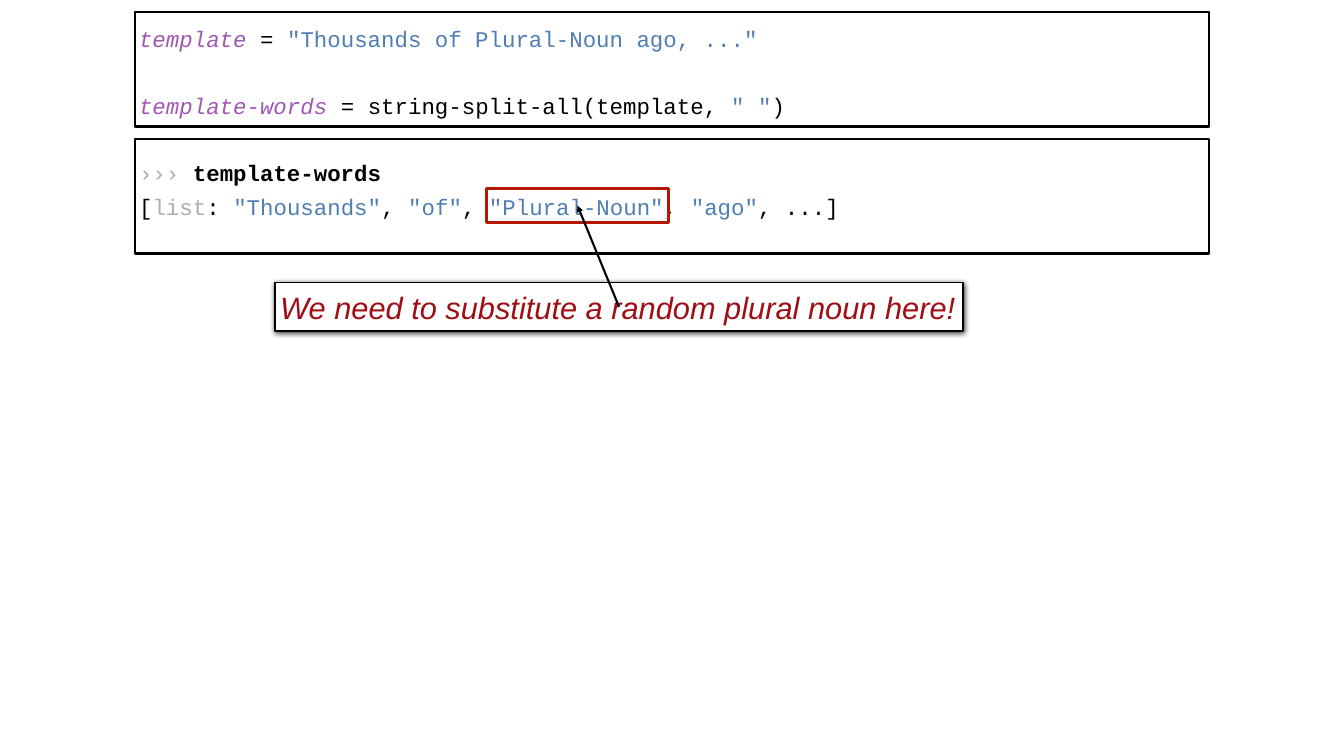
from lxml.etree import SubElement
from pptx import Presentation
from pptx.dml.color import RGBColor
from pptx.enum.shapes import MSO_CONNECTOR as Connector, MSO_SHAPE as Shape
from pptx.enum.text import MSO_ANCHOR as Anchor, MSO_AUTO_SIZE as AutoSize, PP_ALIGN as Align
from pptx.oxml.ns import qn
from pptx.util import Inches, Pt

BLACK = RGBColor(0x00, 0x00, 0x00)
WHITE = RGBColor(0xFF, 0xFF, 0xFF)
PURPLE = RGBColor(0x9F, 0x59, 0xB3)
BLUE = RGBColor(0x50, 0x7E, 0xB3)
GRAY = RGBColor(0xAB, 0xAF, 0xB3)
RED = RGBColor(0xB5, 0x17, 0x00)
DARK_RED = RGBColor(0xA0, 0x0E, 0x15)

CODE_LEFT = 2.68
CODE_LINE = Pt(48)
VARIABLE = {"color": PURPLE, "italic": True}
STRING = {"color": BLUE}
MUTED = {"color": GRAY}
PLAIN = {}

CODE = [
    (False, [("template", VARIABLE), (" = ", PLAIN),
             ('"Thousands of Plural-Noun ago, ..."', STRING)]),
    (True, [("template-words", VARIABLE), (" = string-split-all(template, ", PLAIN),
            ('" "', STRING), (")", PLAIN)]),
    (True, [("››› ", MUTED), ("template-words", {"bold": True})]),
    (False, [("[", PLAIN), ("list", MUTED), (": ", PLAIN), ('"Thousands"', STRING),
             (", ", PLAIN), ('"of"', STRING), (", ", PLAIN), ('"Plural-Noun"', STRING),
             (", ", PLAIN), ('"ago"', STRING), (", ...]", PLAIN)]),
]


def add_text(paragraph, text, size=32, font="Courier New", color=BLACK, bold=False, italic=False):
    """Append one formatted run to a paragraph."""
    run = paragraph.add_run()
    run.text = text
    run.font.size = Pt(size)
    run.font.name = font
    run.font.color.rgb = color
    run.font.bold = bold
    run.font.italic = italic


def set_margins(frame, margin):
    """Give a text frame the same margin on all sides."""
    frame.margin_left = frame.margin_right = Inches(margin)
    frame.margin_top = frame.margin_bottom = Inches(margin)


def add_code(slide, lines, left, top, width, height):
    """Add code lines, with a one-line gap before those that start a block."""
    frame = slide.shapes.add_textbox(
        Inches(left), Inches(top), Inches(width), Inches(height)).text_frame
    frame.word_wrap = True
    set_margins(frame, 0.08)
    for index, (starts_block, pieces) in enumerate(lines):
        paragraph = frame.add_paragraph() if index else frame.paragraphs[0]
        paragraph.line_spacing = CODE_LINE
        paragraph.space_before = CODE_LINE if starts_block else Pt(0)
        for text, style in pieces:
            add_text(paragraph, text, **style)


def add_box(slide, left, top, width, height, line_color=BLACK, line_width=3, fill=None):
    """Add an outlined rectangle."""
    shape = slide.shapes.add_shape(
        Shape.RECTANGLE, Inches(left), Inches(top), Inches(width), Inches(height))
    shape.shadow.inherit = False
    if fill is None:
        shape.fill.background()
    else:
        shape.fill.solid()
        shape.fill.fore_color.rgb = fill
    shape.line.color.rgb = line_color
    shape.line.width = Pt(line_width)
    return shape


def add_shadow(shape):
    """Give a shape a soft black shadow below it."""
    effects = shape._element.spPr.find(qn("a:effectLst"))
    shadow = SubElement(effects, qn("a:outerShdw"), blurRad=str(Pt(8)), dist=str(Pt(2)),
                        dir="5400000", rotWithShape="0")
    color = SubElement(shadow, qn("a:srgbClr"), val=str(BLACK))
    SubElement(color, qn("a:alpha"), val="75000")


def add_callout(slide, text, left, top, width, height):
    """Add a shadowed box holding one line of text."""
    shape = add_box(slide, left, top, width, height, line_width=2, fill=WHITE)
    add_shadow(shape)
    frame = shape.text_frame
    frame.word_wrap = False
    frame.auto_size = AutoSize.SHAPE_TO_FIT_TEXT
    frame.vertical_anchor = Anchor.MIDDLE
    set_margins(frame, 0.1)
    paragraph = frame.paragraphs[0]
    paragraph.alignment = Align.LEFT
    add_text(paragraph, text, size=44, font="Arial", color=DARK_RED, italic=True)
    return shape


def center(shape):
    """Return the centre point of a shape."""
    return shape.left + shape.width // 2, shape.top + shape.height // 2


def add_arrow(slide, source, target):
    """Draw an arrow from the centre of one shape to that of another."""
    arrow = slide.shapes.add_connector(Connector.STRAIGHT, *center(source), *center(target))
    arrow.line.color.rgb = BLACK
    arrow.line.width = Pt(3)
    SubElement(arrow.line._get_or_add_ln(), qn("a:tailEnd"), type="triangle")
    SubElement(arrow._element.spPr, qn("a:effectLst"))


def main():
    """Build and save the slide."""
    presentation = Presentation()
    presentation.slide_width = Inches(26.67)
    presentation.slide_height = Inches(15)
    slide = presentation.slides.add_slide(presentation.slide_layouts[6])
    add_code(slide, CODE, CODE_LEFT, 0.28, 21.3, 14.45)
    highlight = add_box(slide, 9.65, 3.74, 3.62, 0.68, line_color=RED, line_width=5)
    callout = add_callout(slide, "We need to substitute a random plural noun here!",
                          5.46, 5.61, 13.65, 0.96)
    add_arrow(slide, callout, highlight)
    for top in (0.23, 2.75):
        add_box(slide, CODE_LEFT, top, 21.32, 2.28)
    presentation.save("out.pptx")


if __name__ == "__main__":
    main()
